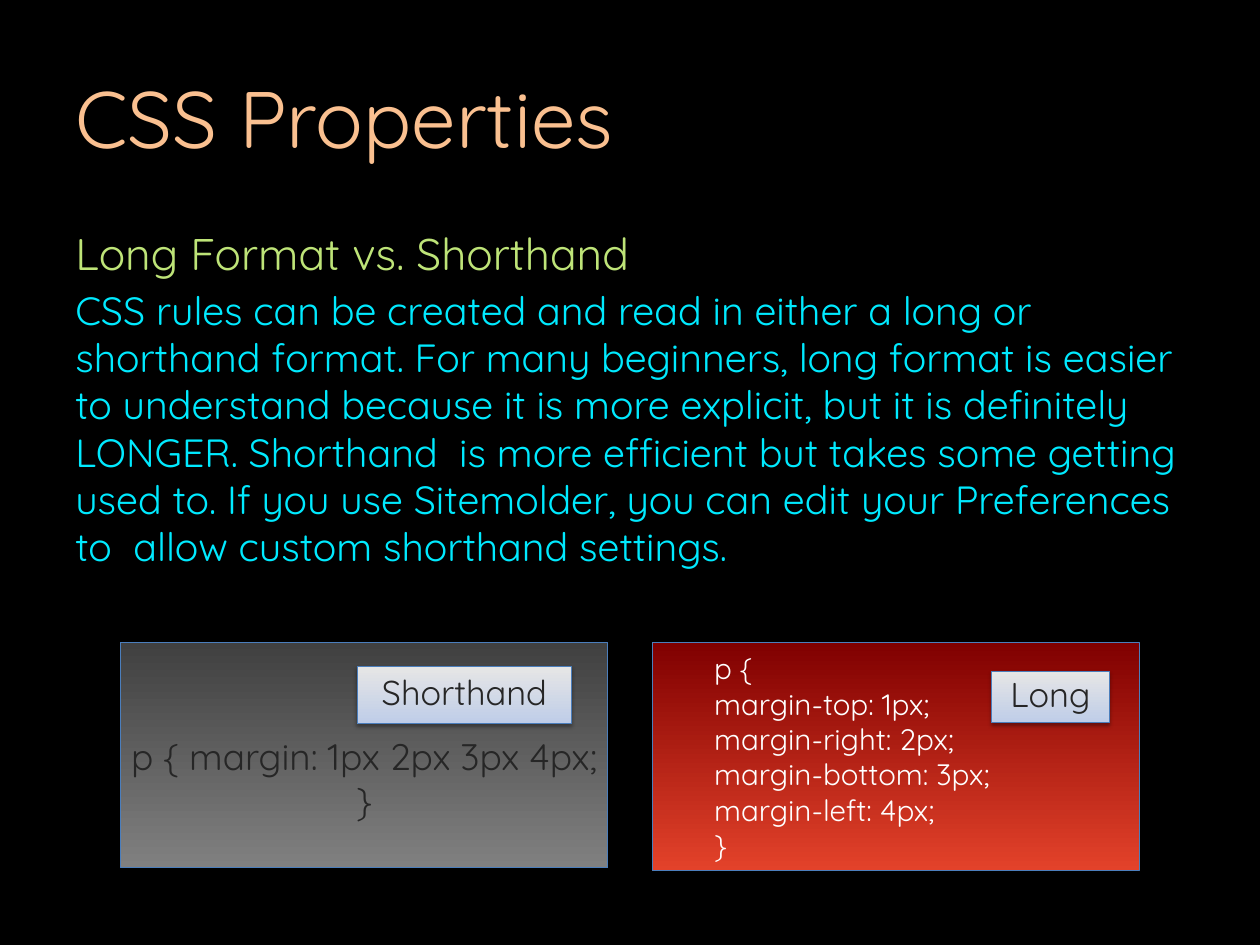
from lxml import etree
from pptx import Presentation
from pptx.dml.color import RGBColor as RGB
from pptx.enum.shapes import MSO_SHAPE as SHAPE
from pptx.enum.text import MSO_ANCHOR as ANCHOR, PP_ALIGN as ALIGN
from pptx.oxml import parse_xml
from pptx.util import Inches, Pt

FONT = "Quicksand"
COLORS = {
    "back": "000000", "title": "FAC090", "head": "BEE478", "body": "00EAFF",
    "edge": "4B7EBC", "dark": "262626", "white": "FFFFFF",
    "gray": ("808080", "404040"), "red": ("E3422A", "800000"),
    "label": ("BFCDE8", "E6E6E6"),
}
SHADOW = (
    '<a:effectLst xmlns:a="http://schemas.openxmlformats.org/drawingml/2006/main">'
    '<a:outerShdw blurRad="40000" dist="23000" dir="5400000" rotWithShape="0">'
    '<a:srgbClr val="000000"><a:alpha val="35000"/></a:srgbClr>'
    '</a:outerShdw></a:effectLst>'
)


def write(shape, text, styles, anchor, side, edge):
    """Fill a shape with text; styles holds one (size, color) per paragraph, the last one repeating."""
    frame = shape.text_frame
    frame.word_wrap = True
    frame.vertical_anchor = anchor
    frame.margin_left = frame.margin_right = Inches(side)
    frame.margin_top = frame.margin_bottom = Inches(edge)
    frame.text = text
    for i, para in enumerate(frame.paragraphs):
        size, color = styles[min(i, len(styles) - 1)]
        para.alignment = ALIGN.LEFT
        for run in para.runs:
            run.font.name = FONT
            run.font.size = Pt(size)
            run.font.color.rgb = RGB.from_string(COLORS[color])
    return frame


def add_panel(box, fill, text, size, color):
    """Add a gradient box, shaded from bottom to top, with a soft shadow."""
    panel = slide.shapes.add_shape(SHAPE.RECTANGLE, *map(Inches, box))
    panel.fill.gradient()
    panel.fill.gradient_angle = 90
    for stop, tone in zip(panel.fill.gradient_stops, COLORS[fill]):
        stop.color.rgb = RGB.from_string(tone)
    panel.line.color.rgb = RGB.from_string(COLORS["edge"])
    panel.line.width = Pt(0.75)
    panel._element.spPr.append(parse_xml(SHADOW))
    return write(panel, text, [(size, color)], ANCHOR.MIDDLE, 0.1, 0.05)


deck = Presentation()
deck.slide_width, deck.slide_height = Inches(14.22), Inches(10.67)
slide = deck.slides.add_slide(deck.slide_layouts[6])
slide.background.fill.solid()
slide.background.fill.fore_color.rgb = RGB.from_string(COLORS["back"])

# Title and body
title = slide.shapes.add_textbox(*map(Inches, (0.71, 0.43, 12.8, 1.78)))
write(title, "CSS Properties", [(65, "title")], ANCHOR.MIDDLE, 0.14, 0.07)

body = slide.shapes.add_textbox(*map(Inches, (0.71, 2.49, 12.8, 7.04)))
story = write(
    body,
    "Long Format vs. Shorthand\n"
    "CSS rules can be created and read in either a long or shorthand format. "
    "For many beginners, long format is easier to understand because it is more "
    "explicit, but it is definitely LONGER. Shorthand  is more efficient but takes "
    "some getting used to. If you use Sitemolder, you can edit your Preferences "
    "to  allow custom shorthand settings.",
    [(36, "head"), (32, "body")], ANCHOR.TOP, 0.14, 0.07)
story.paragraphs[1].space_before = Pt(5)

# Code panels
short = add_panel((1.36, 7.25, 5.5, 2.55), "gray",
                  "p { margin: 1px 2px 3px 4px; }", 30, "dark")
short.margin_top = Inches(0.57)
short.paragraphs[0].alignment = ALIGN.CENTER

long = add_panel((7.36, 7.25, 5.5, 2.58), "red",
                 "p {\nmargin-top: 1px;\nmargin-right: 2px;\n"
                 "margin-bottom: 3px;\nmargin-left: 4px;\n}", 24, "white")
long.margin_left = Inches(0.7)

# Labels
for text, box in (("Shorthand", (4.03, 7.53, 2.42, 0.64)),
                  ("Long", (11.19, 7.58, 1.33, 0.58))):
    para = add_panel(box, "label", text, 28, "dark").paragraphs[0]
    para.alignment = ALIGN.CENTER
    para.line_spacing = Pt(28)

deck.save("out.pptx")
